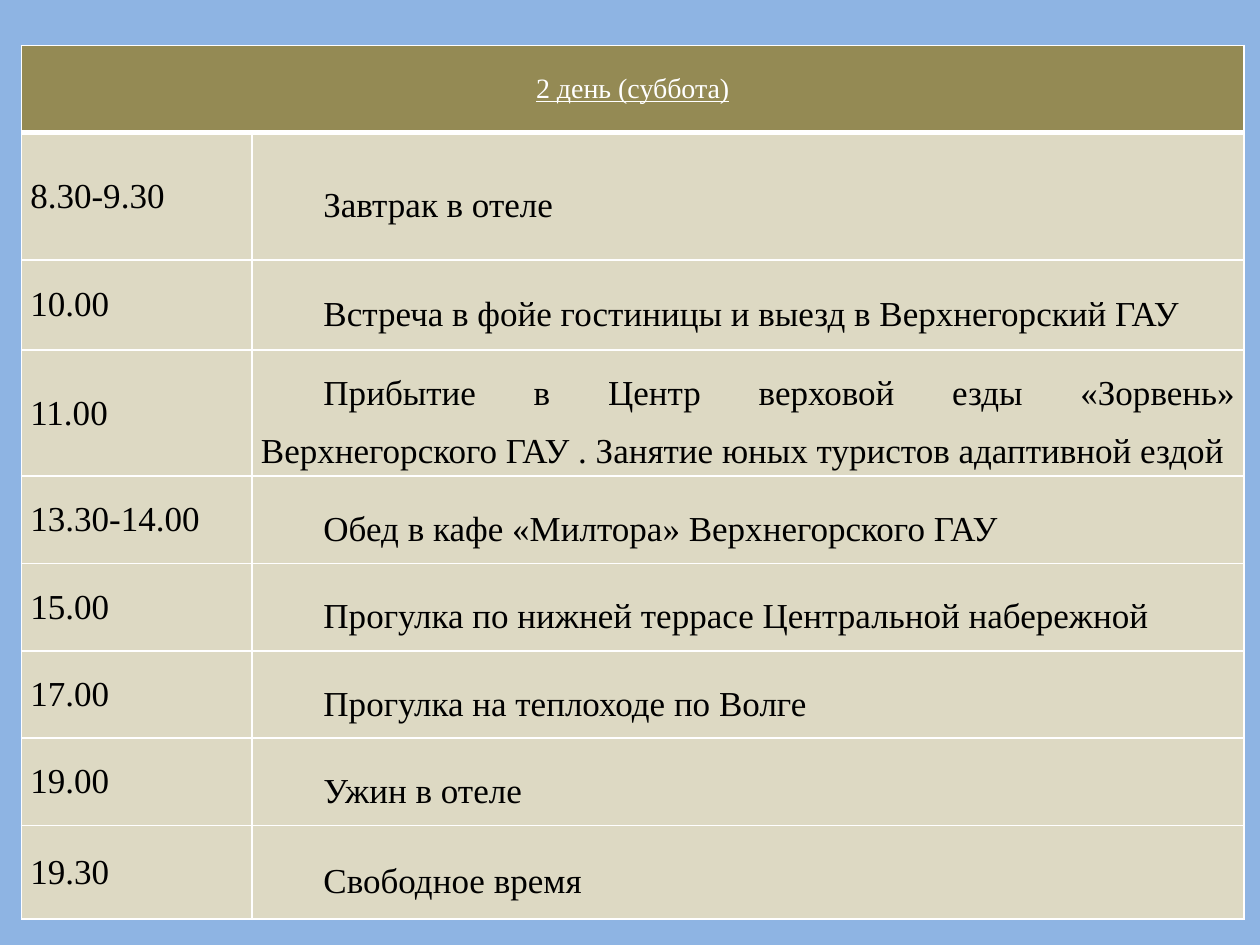
from lxml.etree import SubElement as Sub
from pptx import Presentation
from pptx.dml.color import RGBColor as Rgb
from pptx.enum.text import MSO_ANCHOR as Anchor, PP_ALIGN as Align
from pptx.oxml.ns import qn
from pptx.util import Cm, Pt

# Content: heading, then (time, event, row height in cm)
HEAD = "2 день (суббота)"
PLAN = [
    ("8.30-9.30", "Завтрак в отеле", 2.57),
    ("10.00", "Встреча в фойе гостиницы и выезд в Верхнегорский ГАУ", 1.82),
    ("11.00", "Прибытие в Центр верховой езды «Зорвень» Верхнегорского ГАУ . "
              "Занятие юных туристов адаптивной ездой", 2.54),
    ("13.30-14.00", "Обед в кафе «Милтора» Верхнегорского ГАУ", 1.76),
    ("15.00", "Прогулка по нижней террасе Центральной набережной", 1.76),
    ("17.00", "Прогулка на теплоходе по Волге", 1.76),
    ("19.00", "Ужин в отеле", 1.76),
    ("19.30", "Свободное время", 1.89),
]

THEME = dict(font="Times New Roman", head=16, body=20, back="8EB4E3",
             band="948A54", cell="DDD9C3", line="FFFFFF", ink="000000")
COLS = [4.65, 20]
TOPS = [1.75] + [row[2] for row in PLAN]
LEFT, TOP = 0.43, 0.92


def edge(cell, base=1):
    """Draw white borders; base is the width of the lower one."""
    props = cell._tc.get_or_add_tcPr()
    for side, wide in (("L", 1), ("R", 1), ("T", 1), ("B", base)):
        line = Sub(props, qn(f"a:ln{side}"), w=str(Pt(wide)))
        fill = Sub(line, qn("a:solidFill"))
        Sub(fill, qn("a:srgbClr"), val=THEME["line"])


def write(cell, text, size=THEME["body"], color=THEME["ink"],
          fill=THEME["cell"], align=Align.JUSTIFY, indent=0, space=None,
          under=False):
    cell.fill.solid()
    cell.fill.fore_color.rgb = Rgb.from_string(fill)
    cell.vertical_anchor = Anchor.MIDDLE
    cell.margin_left = cell.margin_right = Cm(0.18)
    cell.margin_top = cell.margin_bottom = 0
    para = cell.text_frame.paragraphs[0]
    para.alignment = align
    if space:
        para.line_spacing = space
    if indent:
        para._p.get_or_add_pPr().set("indent", str(Cm(indent)))
    run = para.add_run()
    run.text = text
    font = run.font
    font.name, font.size = THEME["font"], Pt(size)
    font.bold, font.underline = False, under
    font.color.rgb = Rgb.from_string(color)


# Slide
deck = Presentation()
deck.slide_width, deck.slide_height = Cm(25.4), Cm(19.05)
slide = deck.slides.add_slide(deck.slide_layouts[6])
back = slide.background.fill
back.solid()
back.fore_color.rgb = Rgb.from_string(THEME["back"])

# Table grid
table = slide.shapes.add_table(len(TOPS), len(COLS), Cm(LEFT), Cm(TOP),
                               Cm(sum(COLS)), Cm(sum(TOPS))).table
for col, wide in zip(table.columns, COLS):
    col.width = Cm(wide)
for n, (row, high) in enumerate(zip(table.rows, TOPS)):
    row.height = Cm(high)
    for cell in row.cells:
        edge(cell, base=1 if n else 3)

# Heading row
title = table.cell(0, 0)
title.merge(table.cell(0, 1))
write(title, HEAD, size=THEME["head"], color=THEME["line"],
      fill=THEME["band"], align=Align.CENTER, under=True)

# Timetable rows
for n, (time, event, _) in enumerate(PLAN, 1):
    write(table.cell(n, 0), time)
    write(table.cell(n, 1), event, indent=1.26, space=1.5)

deck.save("out.pptx")
